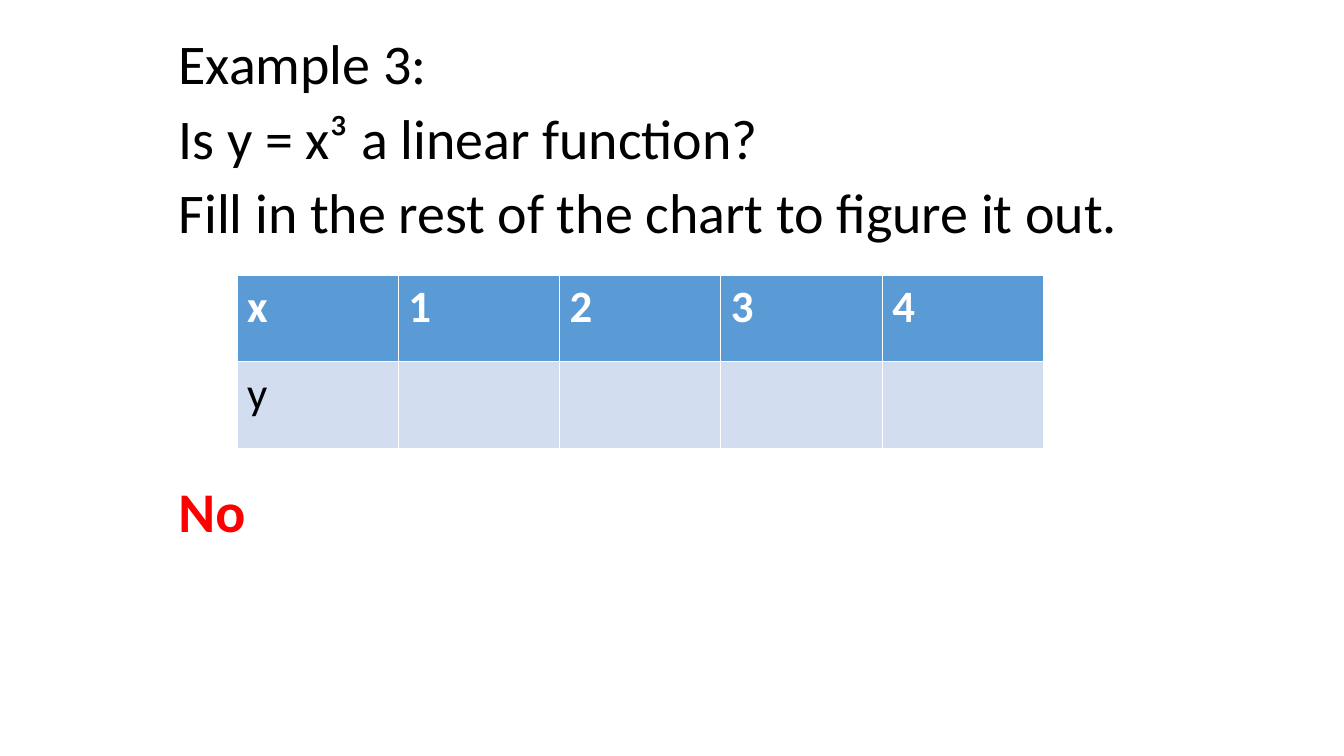
"""Builds the linear function example slide with its table of values."""
from lxml import etree
from pptx import Presentation
from pptx import util as u
from pptx.dml.color import RGBColor
from pptx.enum import text
from pptx.oxml import ns

BLACK = RGBColor(0x00, 0x00, 0x00)
WHITE = RGBColor(0xFF, 0xFF, 0xFF)
RED = RGBColor(0xFF, 0x00, 0x00)
HEADER_BLUE = RGBColor(0x5B, 0x9B, 0xD5)
PALE_BLUE = RGBColor(0xD2, 0xDE, 0xEF)


def write(paragraph, words, size=40, color=BLACK, bold=False, font="Calibri"):
    run = paragraph.add_run()
    run.text = words
    run.font.name = font
    run.font.size = u.Pt(size)
    run.font.bold = bold
    run.font.color.rgb = color


class ExampleSlide:
    def __init__(self, deck):
        self.line_spacing = 0.9
        self.cell_size = 32
        self.slide = deck.slides.add_slide(deck.slide_layouts[1])
        title = self.slide.shapes.title.element
        title.getparent().remove(title)

    def body(self, left, top, width, height, lines):
        question = self.slide.placeholders[1]
        question.left, question.top = u.Inches(left), u.Inches(top)
        question.width, question.height = u.Inches(width), u.Inches(height)
        frame = question.text_frame
        frame.word_wrap = True
        frame.auto_size = text.MSO_AUTO_SIZE.NONE
        frame.vertical_anchor = text.MSO_ANCHOR.TOP
        for index, (words, space_before, style) in enumerate(lines):
            line = frame.add_paragraph() if index else frame.paragraphs[0]
            line.line_spacing = self.line_spacing
            line.space_before = u.Pt(space_before)
            line.space_after = u.Pt(0)
            properties = line._p.get_or_add_pPr()
            properties.set("marL", "0")
            properties.set("indent", "0")
            etree.SubElement(properties, ns.qn("a:buNone"))
            write(line, words, **style)

    def table(self, left, top, column_width, row_height, rows):
        columns = len(rows[0])
        values = self.slide.shapes.add_table(
            len(rows), columns, u.Inches(left), u.Inches(top),
            u.Inches(column_width * columns), u.Inches(row_height * len(rows))).table
        for column in values.columns:
            column.width = u.Inches(column_width)
        for row_index, row in enumerate(rows):
            header = row_index == 0
            values.rows[row_index].height = u.Inches(row_height)
            for column_index, words in enumerate(row):
                cell = values.cell(row_index, column_index)
                cell.fill.solid()
                cell.fill.fore_color.rgb = HEADER_BLUE if header else PALE_BLUE
                if words:
                    write(cell.text_frame.paragraphs[0], words, size=self.cell_size,
                          color=WHITE if header else BLACK, bold=header)


def main():
    deck = Presentation()
    deck.slide_width, deck.slide_height = u.Inches(13.33), u.Inches(7.5)
    example = ExampleSlide(deck)
    example.body(1.67, 0.31, 9.83, 5.55, [
        ("Example 3:", 10, {}),
        ("Is y = x³ a linear function?", 10, {}),
        ("Fill in the rest of the chart to figure it out.", 10, {}),
        ("No", 170, {"color": RED, "bold": True}),
    ])
    example.table(2.35, 2.73, 1.6, 0.86, [
        ["x", "1", "2", "3", "4"],
        ["y", "", "", "", ""],
    ])
    deck.save("out.pptx")


if __name__ == "__main__":
    main()
